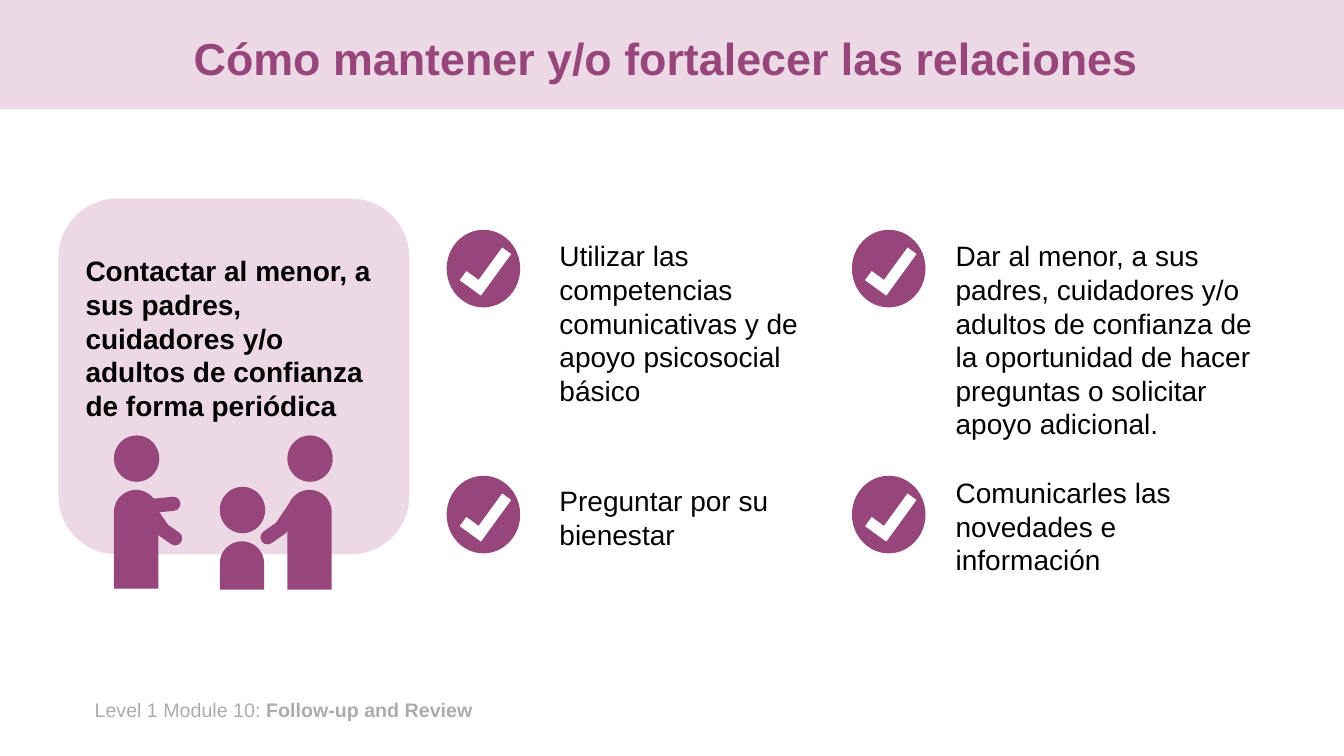
from dataclasses import dataclass

from pptx import Presentation
from pptx.dml.color import RGBColor
from pptx.enum.shapes import MSO_SHAPE
from pptx.enum.text import MSO_ANCHOR, PP_ALIGN
from pptx.util import Inches, Pt

RECT, OVAL = MSO_SHAPE.RECTANGLE, MSO_SHAPE.OVAL
ROUND_RECT, CORNER = MSO_SHAPE.ROUNDED_RECTANGLE, MSO_SHAPE.CORNER
ROUND_TOP = MSO_SHAPE.ROUND_2_SAME_RECTANGLE
TOP, MIDDLE = MSO_ANCHOR.TOP, MSO_ANCHOR.MIDDLE
LEFT, CENTER = PP_ALIGN.LEFT, PP_ALIGN.CENTER


@dataclass(frozen=True)
class Theme:
    font: str = "Arial"
    plum: RGBColor = RGBColor(0x97, 0x46, 0x7C)
    blush: RGBColor = RGBColor(0xED, 0xD8, 0xE6)
    white: RGBColor = RGBColor(0xFF, 0xFF, 0xFF)
    black: RGBColor = RGBColor(0x00, 0x00, 0x00)
    grey: RGBColor = RGBColor(0xAF, 0xAB, 0xAB)
    title_size: Pt = Pt(32)
    body_size: Pt = Pt(20)
    footer_size: Pt = Pt(14)


THEME = Theme()

TICK_LEFTS = (4.43, 8.45)
TICK_TOPS = (2.28, 4.72)

# left, top, width, height, text
ADVICE = (
    (5.45, 2.32, 2.91, 1.78,
     "Utilizar las competencias comunicativas y de apoyo psicosocial básico"),
    (5.45, 4.75, 2.91, 0.77, "Preguntar por su bienestar"),
    (9.38, 2.32, 3.18, 2.12,
     "Dar al menor, a sus padres, cuidadores y/o adultos de confianza de la "
     "oportunidad de hacer preguntas o solicitar apoyo adicional."),
    (9.38, 4.67, 3.18, 1.11, "Comunicarles las novedades e información"),
)

# head left, head top, body top, body height, arms (left, top, height, rotation)
PEOPLE = (
    (2.18, 4.83, 5.37, 0.48, ()),
    (2.85, 4.32, 4.86, 0.99,
     ((2.77, 4.99, 0.34, 214.3), (2.62, 5.19, 0.23, 235))),
    (1.13, 4.32, 4.86, 0.98,
     ((1.48, 4.99, 0.34, 145.7), (1.63, 5.2, 0.23, 125),
      (1.53, 4.82, 0.38, 84.4))),
)


def add_solid(shapes, kind, left, top, width, height, color,
              rotation=0, adjustments=()):
    """Add a borderless, shadowless preset shape."""
    solid = shapes.add_shape(kind, Inches(left), Inches(top),
                             Inches(width), Inches(height))
    solid.shadow.inherit = False
    solid.fill.solid()
    solid.fill.fore_color.rgb = color
    solid.line.fill.background()
    solid.rotation = rotation
    for index, value in enumerate(adjustments):
        solid.adjustments[index] = value
    return solid


def write(frame, text, size, color, bold=None, align=LEFT, anchor=TOP):
    frame.word_wrap = True
    frame.vertical_anchor = anchor
    paragraph = frame.paragraphs[0]
    paragraph.text = text
    paragraph.alignment = align
    font = paragraph.font
    font.name, font.size, font.bold = THEME.font, size, bold
    font.color.rgb = color
    return paragraph


def add_text(slide, left, top, width, height, *content, **style):
    box = slide.shapes.add_textbox(Inches(left), Inches(top),
                                   Inches(width), Inches(height))
    return write(box.text_frame, *content, **style)


def add_header(slide):
    add_solid(slide.shapes, RECT, 0, 0, 13.33, 1.08, THEME.blush)
    title = add_text(slide, 0.92, 0.13, 11.5, 0.95,
                     "Cómo mantener y/o fortalecer las relaciones ",
                     THEME.title_size, THEME.plum,
                     bold=True, align=CENTER, anchor=MIDDLE)
    title.line_spacing = 0.9


def add_footer(slide):
    footer = add_text(slide, 0.84, 6.87, 4.55, 0.34, "Level 1 Module 10: ",
                      THEME.footer_size, THEME.grey)
    module_name = footer.add_run()
    module_name.text = "Follow-up and Review"
    module_name.font.bold = True


def add_contact_card(slide):
    card = add_solid(slide.shapes, ROUND_RECT, 0.58, 1.97, 3.48, 3.53, THEME.blush)
    card.text_frame.margin_top = Inches(0.38)
    write(card.text_frame,
          "Contactar al menor, a sus padres, cuidadores y/o adultos de "
          "confianza de forma periódica",
          THEME.body_size, THEME.black, bold=True)


def add_tick(slide, left, top):
    tick = slide.shapes.add_group_shape().shapes
    add_solid(tick, OVAL, left, top, 0.73, 0.77, THEME.plum)
    add_solid(tick, CORNER, left + 0.13, top + 0.24, 0.51, 0.26, THEME.white,
              rotation=306, adjustments=(0.422, 0.433))


def add_person(slide, left, head_top, body_top, body_height, arms):
    person = slide.shapes.add_group_shape().shapes
    add_solid(person, ROUND_TOP, left, body_top, 0.44, body_height, THEME.plum,
              adjustments=(0.5, 0))
    add_solid(person, OVAL, left, head_top, 0.45, 0.46, THEME.plum)
    for arm_left, arm_top, length, rotation in arms:
        add_solid(person, ROUND_TOP, arm_left, arm_top, 0.14, length, THEME.plum,
                  rotation=rotation, adjustments=(0.493, 0))


def main():
    deck = Presentation()
    deck.slide_width, deck.slide_height = Inches(13.33), Inches(7.5)
    slide = deck.slides.add_slide(deck.slide_layouts[6])

    add_header(slide)
    add_footer(slide)
    for left, top, width, height, text in ADVICE:
        add_text(slide, left, top, width, height, text,
                 THEME.body_size, THEME.black)
    add_contact_card(slide)
    for left in TICK_LEFTS:
        for top in TICK_TOPS:
            add_tick(slide, left, top)
    for person in PEOPLE:
        add_person(slide, *person)

    deck.save("out.pptx")


if __name__ == "__main__":
    main()
